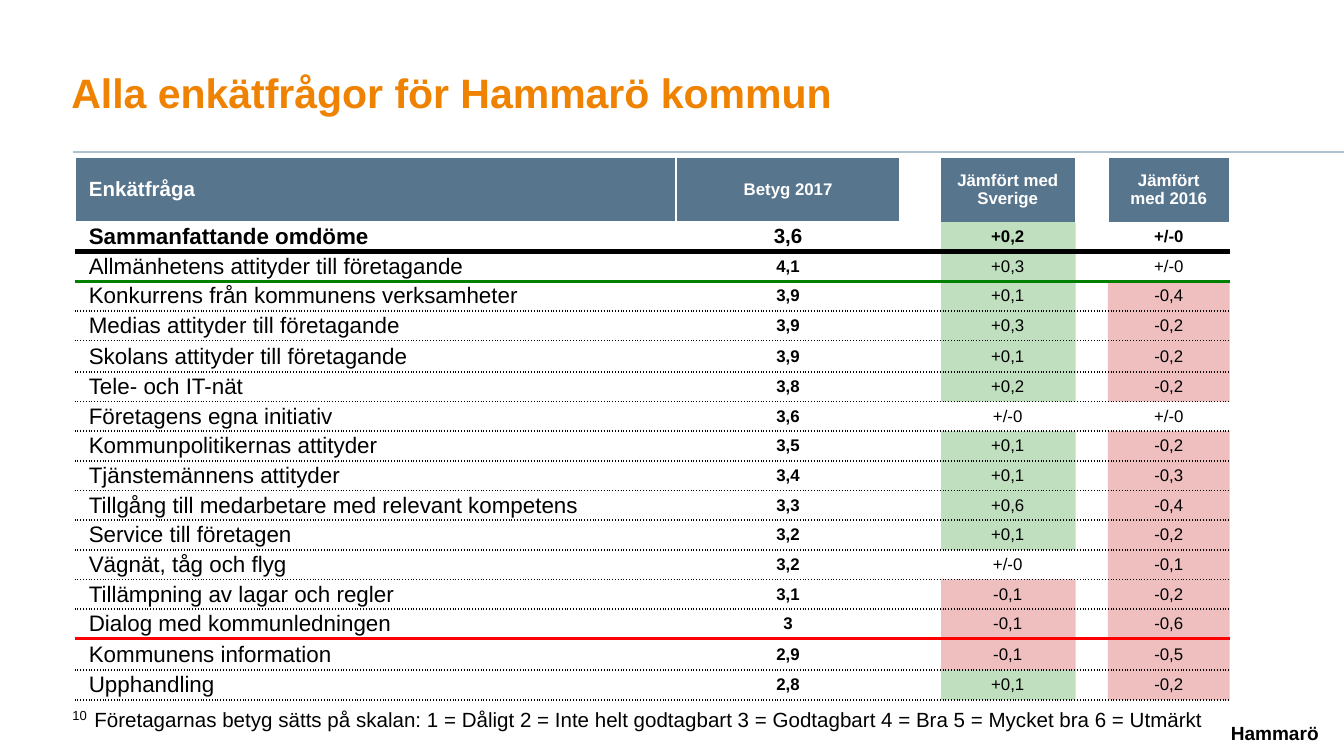
from lxml import etree
from pptx import Presentation
from pptx.dml.color import RGBColor
from pptx.enum import shapes, text
from pptx.oxml import ns
from pptx.util import Pt

# Content
TITLE = "Alla enkätfrågor för Hammarö kommun"
FOOTER = "Hammarö"
PAGE = "10"
SCALE = ("Företagarnas betyg sätts på skalan: 1 = Dåligt 2 = Inte helt godtagbart "
         "3 = Godtagbart 4 = Bra 5 = Mycket bra 6 = Utmärkt")
HEADER = ("Enkätfråga", "Betyg 2017", "Jämfört med Sverige", "Jämfört med 2016")
RATINGS = [
    ("Sammanfattande omdöme", "3,6", "+0,2", "+/-0"),
    ("Allmänhetens attityder till företagande", "4,1", "+0,3", "+/-0"),
    ("Konkurrens från kommunens verksamheter", "3,9", "+0,1", "-0,4"),
    ("Medias attityder till företagande", "3,9", "+0,3", "-0,2"),
    ("Skolans attityder till företagande", "3,9", "+0,1", "-0,2"),
    ("Tele- och IT-nät", "3,8", "+0,2", "-0,2"),
    ("Företagens egna initiativ", "3,6", "+/-0", "+/-0"),
    ("Kommunpolitikernas attityder", "3,5", "+0,1", "-0,2"),
    ("Tjänstemännens attityder", "3,4", "+0,1", "-0,3"),
    ("Tillgång till medarbetare med relevant kompetens", "3,3", "+0,6", "-0,4"),
    ("Service till företagen", "3,2", "+0,1", "-0,2"),
    ("Vägnät, tåg och flyg", "3,2", "+/-0", "-0,1"),
    ("Tillämpning av lagar och regler", "3,1", "-0,1", "-0,2"),
    ("Dialog med kommunledningen", "3", "-0,1", "-0,6"),
    ("Kommunens information", "2,9", "-0,1", "-0,5"),
    ("Upphandling", "2,8", "+0,1", "-0,2"),
]

# Table layout
COLUMNS = (321.7, 120.2, 21.2, 72.8, 17.1, 65.3)
TEXT_COLUMNS = (0, 1, 3, 5)
COMPARE_COLUMNS = (3, 5)
HEADER_HEIGHT, ROW_HEIGHT, TALL_HEIGHT = 34.5, 15.9, 16.9
TALL_ROWS = (5, 15)
NO_STYLE = "{2D5ABB26-0587-4C30-8999-92F81FD0307C}"

# Rules: colour, width, dash
WHITE_RULE = ("FFFFFF", 1, "solid")
DOTTED_RULE = ("000000", 1, "sysDot")
RULE_BELOW = {1: ("000000", 3, "solid"), 2: ("008000", 2, "solid"), 14: ("FF0000", 2, "solid")}

FONT = "Arial"
LEFT, CENTER, RIGHT = text.PP_ALIGN.LEFT, text.PP_ALIGN.CENTER, text.PP_ALIGN.RIGHT
MIDDLE, BOTTOM, TOP = text.MSO_ANCHOR.MIDDLE, text.MSO_ANCHOR.BOTTOM, text.MSO_ANCHOR.TOP


def rgb(value):
    return RGBColor.from_string(value)


def write(tf, words, size, color="000000", bold=False, align=LEFT):
    p = tf.paragraphs[0]
    p.alignment = align
    r = p.add_run()
    r.text = words
    r.font.name, r.font.size, r.font.bold = FONT, Pt(size), bold
    r.font.color.rgb = rgb(color)


def set_frame(tf, margins, anchor, wrap=True):
    tf.margin_left, tf.margin_top, tf.margin_right, tf.margin_bottom = map(Pt, margins)
    tf.vertical_anchor, tf.word_wrap = anchor, wrap


def add_text(s, box, margins, anchor, words, size, wrap=True, **style):
    tf = s.shapes.add_textbox(*map(Pt, box)).text_frame
    set_frame(tf, margins, anchor, wrap)
    write(tf, words, size, **style)


def rule_under(row, col):
    if row == 0:
        return None if col in COMPARE_COLUMNS else WHITE_RULE
    return RULE_BELOW.get(row, DOTTED_RULE)


def set_borders(cell, row, col):
    side = WHITE_RULE
    borders = {
        "lnL": side if row == 0 or col <= 2 else None,
        "lnR": side if row == 0 or col <= 1 else None,
        "lnT": side if row == 0 else rule_under(row - 1, col),
        "lnB": rule_under(row, col),
    }
    tcPr = cell._tc.get_or_add_tcPr()
    for tag, rule in borders.items():
        if rule is None:
            continue
        color, width, dash = rule
        ln = etree.SubElement(tcPr, ns.qn("a:" + tag), w=str(Pt(width)))
        fill = etree.SubElement(ln, ns.qn("a:solidFill"))
        etree.SubElement(fill, ns.qn("a:srgbClr"), val=color)
        etree.SubElement(ln, ns.qn("a:prstDash"), val=dash)


def set_fill(cell, color, alpha=None):
    cell.fill.solid()
    cell.fill.fore_color.rgb = rgb(color)
    if alpha:
        clr = cell._tc.tcPr.find(".//" + ns.qn("a:solidFill") + "[last()]/" + ns.qn("a:srgbClr"))
        clr = cell._tc.tcPr.find(ns.qn("a:solidFill")).find(ns.qn("a:srgbClr"))
        etree.SubElement(clr, ns.qn("a:alpha"), val=str(alpha * 1000))


def change_color(value):
    if value == "+/-0":
        return "FFFFFF"
    return "008000" if value.startswith("+") else "C00000"


def fill_cell(cell, row, col):
    set_borders(cell, row, col)
    if col not in TEXT_COLUMNS:
        # Gap column: small end mark so that the row keeps its height
        cell.margin_top = cell.margin_bottom = 0
        set_fill(cell, "FFFFFF")
        etree.SubElement(cell.text_frame.paragraphs[0]._p, ns.qn("a:endParaRPr"), sz="900")
        return

    cell.margin_left = cell.margin_right = Pt(7.2)
    cell.margin_top = cell.margin_bottom = 0
    cell.vertical_anchor = MIDDLE
    words = ([HEADER] + RATINGS)[row][TEXT_COLUMNS.index(col)]
    size = 9
    if col == 0:
        size = 11 if row == 0 else 12
    elif (row, col) == (1, 1):
        size = 11
    write(cell.text_frame, words, size, "FFFFFF" if row == 0 else "000000",
          bold=row <= 1 or col == 1, align=LEFT if col == 0 else CENTER)
    if row == 0:
        set_fill(cell, "57758D")
    elif col in COMPARE_COLUMNS:
        set_fill(cell, change_color(words), 25)
    else:
        cell.fill.background()


def add_ratings(s):
    heights = [HEADER_HEIGHT] + [TALL_HEIGHT if i in TALL_ROWS else ROW_HEIGHT
                                 for i in range(1, len(RATINGS) + 1)]
    frame = s.shapes.add_table(len(heights), len(COLUMNS), Pt(40.4), Pt(84.4),
                               Pt(sum(COLUMNS)), Pt(sum(heights)))
    table = frame.table
    table.first_row = table.horz_banding = False
    table._tbl.tblPr.find(ns.qn("a:tableStyleId")).text = NO_STYLE
    for column, width in zip(table.columns, COLUMNS):
        column.width = Pt(width)
    for row, height in enumerate(heights):
        table.rows[row].height = Pt(height)
        for col in range(len(COLUMNS)):
            fill_cell(table.cell(row, col), row, col)


def main():
    prs = Presentation()
    prs.slide_width, prs.slide_height = Pt(720), Pt(405)
    s = prs.slides.add_slide(prs.slide_layouts[5])

    # Title and the line under it
    title = s.shapes.title
    title.left, title.top, title.width, title.height = map(Pt, (38.2, 10.8, 537.8, 54.7))
    set_frame(title.text_frame, (0, 0, 0, 2.9), BOTTOM)
    title.text_frame.auto_size = text.MSO_AUTO_SIZE.NONE
    write(title.text_frame, TITLE, 22, "EF8200", bold=True)
    line = s.shapes.add_connector(shapes.MSO_CONNECTOR.STRAIGHT,
                                  Pt(39), Pt(81.4), Pt(720), Pt(81.4))
    line.line.color.rgb, line.line.width = rgb("AEC1CF"), Pt(1)
    etree.SubElement(line._element.spPr, ns.qn("a:effectLst"))

    # Footer, page number and scale
    add_text(s, (373, 377.3, 333.4, 21.6), (0, 0, 0, 0), BOTTOM, FOOTER, 10.2,
             bold=True, align=RIGHT)
    add_text(s, (31.7, 378.7, 24.5, 9.4), (7.2, 3.6, 7.2, 3.6), MIDDLE, PAGE, 7)
    add_text(s, (40.3, 375.1, 613.4, 20.9), (10.2, 3.6, 7.2, 3.6), TOP, SCALE, 11, wrap=False)

    add_ratings(s)
    prs.save("out.pptx")


if __name__ == "__main__":
    main()
